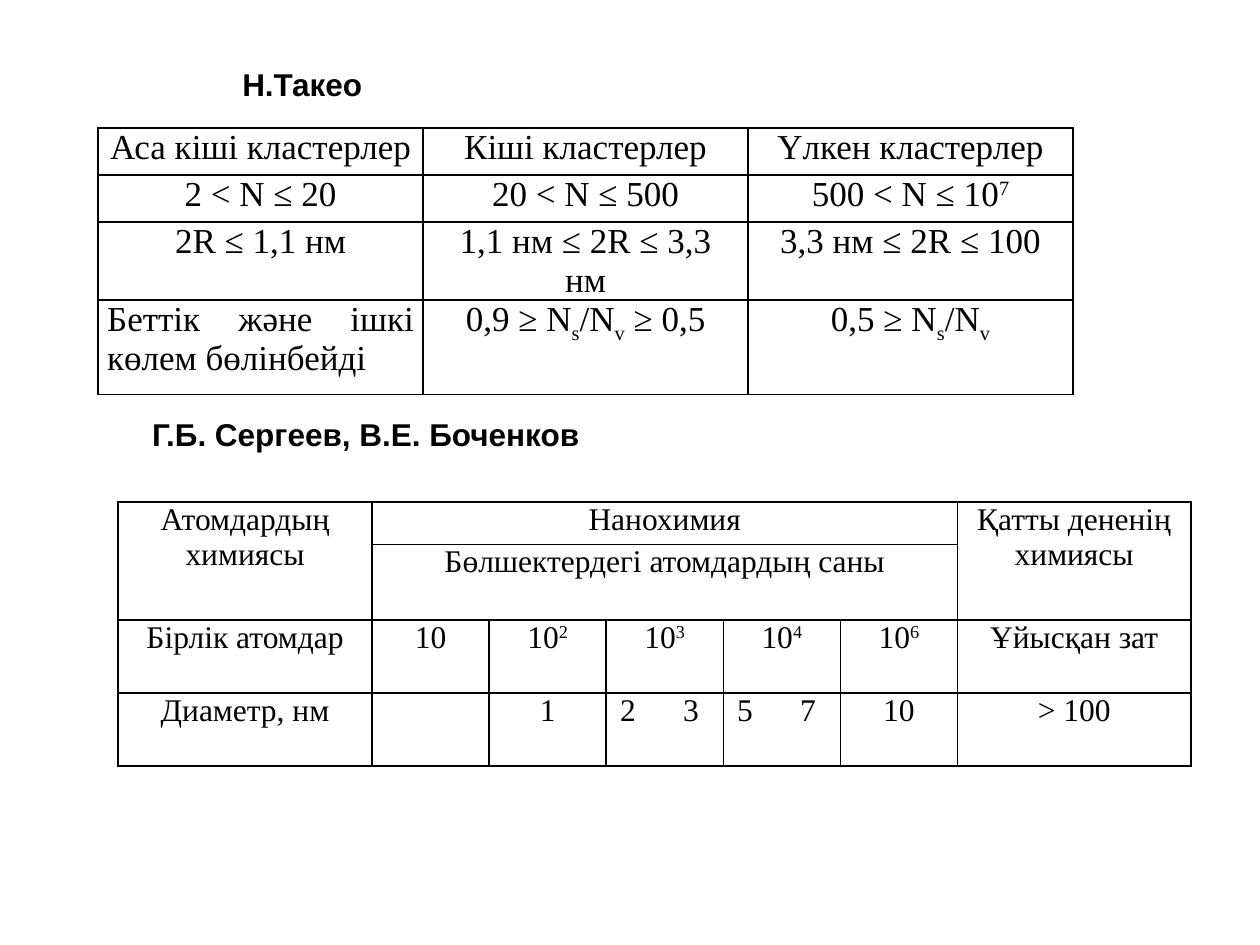
from lxml import etree
from pptx import Presentation
from pptx import util as u
from pptx.dml.color import RGBColor
from pptx.enum import text
from pptx.oxml import ns

COLORS = {"ink": "000000"}
INK = RGBColor.from_string(COLORS["ink"])
ALIGN = text.PP_ALIGN

# Content: "^" raises and "_" lowers the next character, "\n" breaks the line,
# "\t" separates two values set at opposite sides of a cell, None is merged away
HEADINGS = [
    dict(words="Н.Такео", place=(3.38, 1.19, 4.22, 1.02)),
    dict(words="Г.Б. Сергеев, В.Е. Боченков", place=(1.57, 8.23, 10.49, 1.02)),
]
TABLES = [
    dict(
        place=(1.98, 2.58), size=20,
        columns=[6.55] * 3, rows=[0.95, 0.95, 1.56, 1.91],
        cells=[
            ["Аса кіші кластерлер", "Кіші кластерлер", "Үлкен кластерлер"],
            ["2 < N ≤ 20", "20 < N ≤ 500", "500 < N ≤ 10^7"],
            ["2R ≤ 1,1 нм", "1,1 нм ≤ 2R ≤ 3,3\nнм", "3,3 нм ≤ 2R ≤ 100"],
            ["Беттік және ішкі көлем бөлінбейді",
             "0,9 ≥ N_s/N_v ≥ 0,5", "0,5 ≥ N_s/N_v"],
        ],
        merges=[], justified=[(3, 0)],
    ),
    dict(
        place=(2.38, 10.12), size=18,
        columns=[5.12] + [2.36] * 5 + [4.71], rows=[0.86, 1.52, 1.47, 1.47],
        cells=[
            ["Атомдардың химиясы", "Нанохимия", None, None, None, None,
             "Қатты дененің химиясы"],
            [None, "Бөлшектердегі атомдардың саны"] + [None] * 5,
            ["Бірлік атомдар", "10", "10^2", "10^3", "10^4", "10^6", "Ұйысқан зат"],
            ["Диаметр, нм", None, "1", "2\t3", "5\t7", "10", "> 100"],
        ],
        merges=[((0, 0), (1, 0)), ((0, 1), (0, 5)),
                ((1, 1), (1, 5)), ((0, 6), (1, 6))],
        justified=[],
    ),
]
BASELINES = {"^": "30000", "_": "-25000"}
CELL_FORMAT = dict(margin_left=u.Cm(0.18), margin_right=u.Cm(0.18),
                   margin_top=0, margin_bottom=0)
FRAME_FORMAT = dict(word_wrap=True, auto_size=text.MSO_AUTO_SIZE.NONE,
                    vertical_anchor=text.MSO_ANCHOR.MIDDLE)


def apply(target, values):
    for name, value in values.items():
        setattr(target, name, value)


def add_span(para, words, font, baseline=None):
    span = para.add_run()
    span.text = words
    apply(span.font, font)
    span.font.color.rgb = INK
    if baseline:
        span.font._element.set("baseline", baseline)


def write(para, words, font):
    plain = ""
    letters = iter(words)
    for letter in letters:
        if letter not in BASELINES and letter != "\n":
            plain += letter
            continue
        if plain:
            add_span(para, plain, font)
            plain = ""
        if letter == "\n":
            para.add_line_break()
        else:
            add_span(para, next(letters), font, BASELINES[letter])
    if plain:
        add_span(para, plain, font)


def add_right_tab(para, indent, stop):
    props = para._p.get_or_add_pPr()
    props.set("marL", str(indent))
    props.set("indent", "0")
    stops = etree.SubElement(props, ns.qn("a:tabLst"))
    etree.SubElement(stops, ns.qn("a:tab"), pos=str(stop), algn="r")


def add_borders(cell):
    props = cell._tc.get_or_add_tcPr()
    for place, side in enumerate(("lnL", "lnR", "lnT", "lnB")):
        line = etree.Element(ns.qn("a:" + side), w=str(u.Pt(1)))
        fill = etree.SubElement(line, ns.qn("a:solidFill"))
        etree.SubElement(fill, ns.qn("a:srgbClr"), val=COLORS["ink"])
        props.insert(place, line)


def add_heading(box, heading):
    places = zip(("left", "top", "width", "height"), map(u.Cm, heading["place"]))
    apply(box, dict(places))
    frame = box.text_frame
    apply(frame, FRAME_FORMAT)
    para = frame.paragraphs[0]
    para.alignment = ALIGN.LEFT
    props = para._p.get_or_add_pPr()
    props.set("marL", "0")
    props.set("indent", str(u.Cm(1.25)))
    write(para, heading["words"], dict(name="Arial", size=u.Pt(18), bold=True))


def add_grid(page, data):
    columns, rows = data["columns"], data["rows"]
    extent = map(u.Cm, (*data["place"], sum(columns), sum(rows)))
    table = page.shapes.add_table(len(rows), len(columns), *extent).table
    apply(table, dict(first_row=False, horz_banding=False))
    for column, width in zip(table.columns, columns):
        column.width = u.Cm(width)
    for row, height in zip(table.rows, rows):
        row.height = u.Cm(height)
    for first, last in data["merges"]:
        table.cell(*first).merge(table.cell(*last))

    font = dict(name="Times New Roman", size=u.Pt(data["size"]))
    for r, line in enumerate(data["cells"]):
        for c, words in enumerate(line):
            cell = table.cell(r, c)
            apply(cell, CELL_FORMAT)
            cell.fill.background()
            add_borders(cell)
            if words is None:
                continue
            para = cell.text_frame.paragraphs[0]
            if "\t" in words:
                add_right_tab(para, u.Cm(0.1), u.Cm(1.9))
                para.alignment = ALIGN.LEFT
            else:
                justified = (r, c) in data["justified"]
                para.alignment = ALIGN.JUSTIFY if justified else ALIGN.CENTER
            write(para, words, font)


def main():
    deck = Presentation()
    apply(deck, dict(slide_width=u.Cm(25.4), slide_height=u.Cm(19.05)))
    page = deck.slides.add_slide(deck.slide_layouts[5])

    # Headings: the first is the slide title, the second a text box
    add_heading(page.shapes.title, HEADINGS[0])
    second = page.shapes.add_textbox(*map(u.Cm, HEADINGS[1]["place"]))
    add_heading(second, HEADINGS[1])

    # Cluster classifications
    for data in TABLES:
        add_grid(page, data)
    deck.save("out.pptx")


if __name__ == "__main__":
    main()
